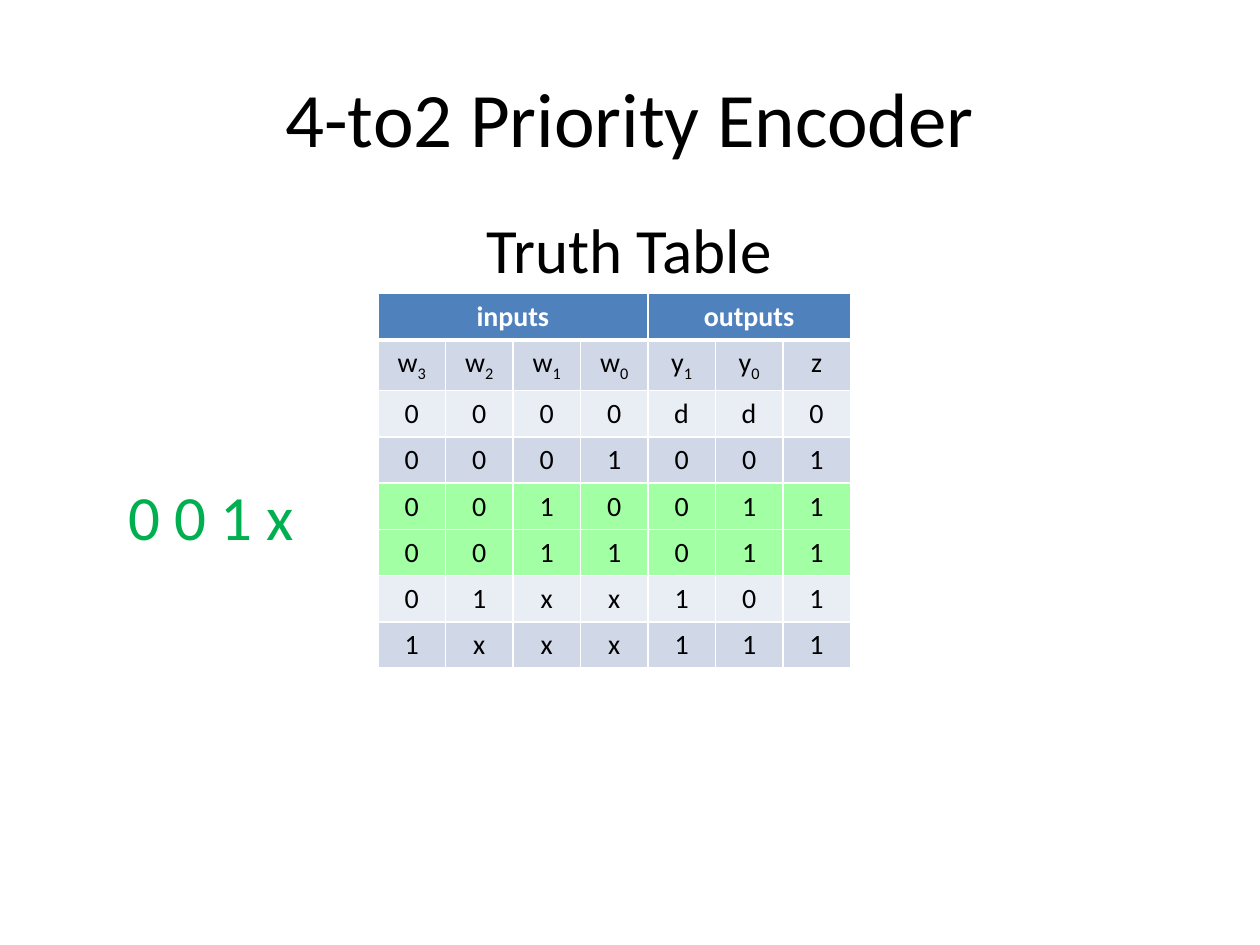
from pptx import Presentation
from pptx.dml.color import RGBColor
from pptx.enum.text import MSO_ANCHOR, PP_ALIGN
from pptx.oxml import parse_xml
from pptx.oxml.ns import nsdecls
from pptx.util import Cm, Pt

BLACK = RGBColor(0x00, 0x00, 0x00)
WHITE = RGBColor(0xFF, 0xFF, 0xFF)
GREEN = RGBColor(0x00, 0xB0, 0x50)
HEADER = RGBColor(0x4F, 0x81, 0xBD)
BANDS = (RGBColor(0xE9, 0xED, 0xF4), RGBColor(0xD0, 0xD8, 0xE8))
HIGHLIGHT = RGBColor(0xA3, 0xFF, 0xA3)
FONT = "Calibri"

TEXTS = [
    ("4-to2 Priority Encoder", (1.27, 0.76, 22.86, 3.18), 44, BLACK, PP_ALIGN.CENTER, MSO_ANCHOR.MIDDLE),
    (" Truth Table", (9.27, 4.11, 6.68, 1.8), 36, BLACK, PP_ALIGN.LEFT, MSO_ANCHOR.TOP),
    ("0 0 1 x", (2.34, 9.5, 4.65, 1.8), 36, GREEN, PP_ALIGN.LEFT, MSO_ANCHOR.TOP),
]
GROUPS = [("inputs", 0, 3), ("outputs", 4, 6)]
ROWS = [
    "w3 w2 w1 w0 y1 y0 z",
    "0 0 0 0 d d 0",
    "0 0 0 1 0 0 1",
    "0 0 1 0 0 1 1",
    "0 0 1 1 0 1 1",
    "0 1 x x 1 0 1",
    "1 x x x 1 1 1",
]
HIGHLIGHTED = (4, 5)
N_COLS = 7
LEFT, TOP, COL_W, ROW_H = 7.62, 5.92, 1.36, 0.93


def format_run(r, size, color, bold=False):
    r.font.name = FONT
    r.font.size = Pt(size)
    r.font.bold = bold
    r.font.color.rgb = color


def add_text(s, text, box, size, color, align, anchor):
    tf = s.shapes.add_textbox(*map(Cm, box)).text_frame
    tf.word_wrap = True
    tf.vertical_anchor = anchor
    p = tf.paragraphs[0]
    p.text = text
    p.alignment = align
    format_run(p.runs[0], size, color)


def style_cell(cell, fill, bottom=1):
    tc_pr = cell._tc.get_or_add_tcPr()
    for side, width in (("L", 1), ("R", 1), ("T", 1), ("B", bottom)):
        tc_pr.append(parse_xml(
            f'<a:ln{side} {nsdecls("a")} w="{Pt(width)}"><a:solidFill>'
            f'<a:srgbClr val="{WHITE}"/></a:solidFill></a:ln{side}>'))
    cell.fill.solid()
    cell.fill.fore_color.rgb = fill


def fill_cell(cell, parts, color, bold=False):
    p = cell.text_frame.paragraphs[0]
    p.alignment = PP_ALIGN.CENTER
    for i, part in enumerate(parts):
        r = p.add_run()
        r.text = part
        format_run(r, 16, color, bold)
        if i:
            r._r.get_or_add_rPr().set("baseline", "-25000")


def add_truth_table(s):
    n_rows = len(ROWS) + 1
    table = s.shapes.add_table(n_rows, N_COLS, Cm(LEFT), Cm(TOP),
                               Cm(COL_W * N_COLS), Cm(ROW_H * n_rows)).table
    table.first_row = table.horz_banding = False
    for col in table.columns:
        col.width = Cm(COL_W)
    for row in table.rows:
        row.height = Cm(ROW_H)
    for c in range(N_COLS):
        style_cell(table.cell(0, c), HEADER, bottom=3)
    for name, first, last in GROUPS:
        cell = table.cell(0, first)
        cell.merge(table.cell(0, last))
        cell.vertical_anchor = MSO_ANCHOR.MIDDLE
        fill_cell(cell, [name], WHITE, bold=True)
    for i, row in enumerate(ROWS, 1):
        fill = HIGHLIGHT if i in HIGHLIGHTED else BANDS[i % 2]
        for c, value in enumerate(row.split()):
            cell = table.cell(i, c)
            style_cell(cell, fill)
            fill_cell(cell, value, BLACK)


def main():
    prs = Presentation()
    prs.slide_width, prs.slide_height = Cm(25.4), Cm(19.05)
    s = prs.slides.add_slide(prs.slide_layouts[6])
    add_text(s, *TEXTS[0])
    add_truth_table(s)
    for item in TEXTS[1:]:
        add_text(s, *item)
    prs.save("out.pptx")


if __name__ == "__main__":
    main()
